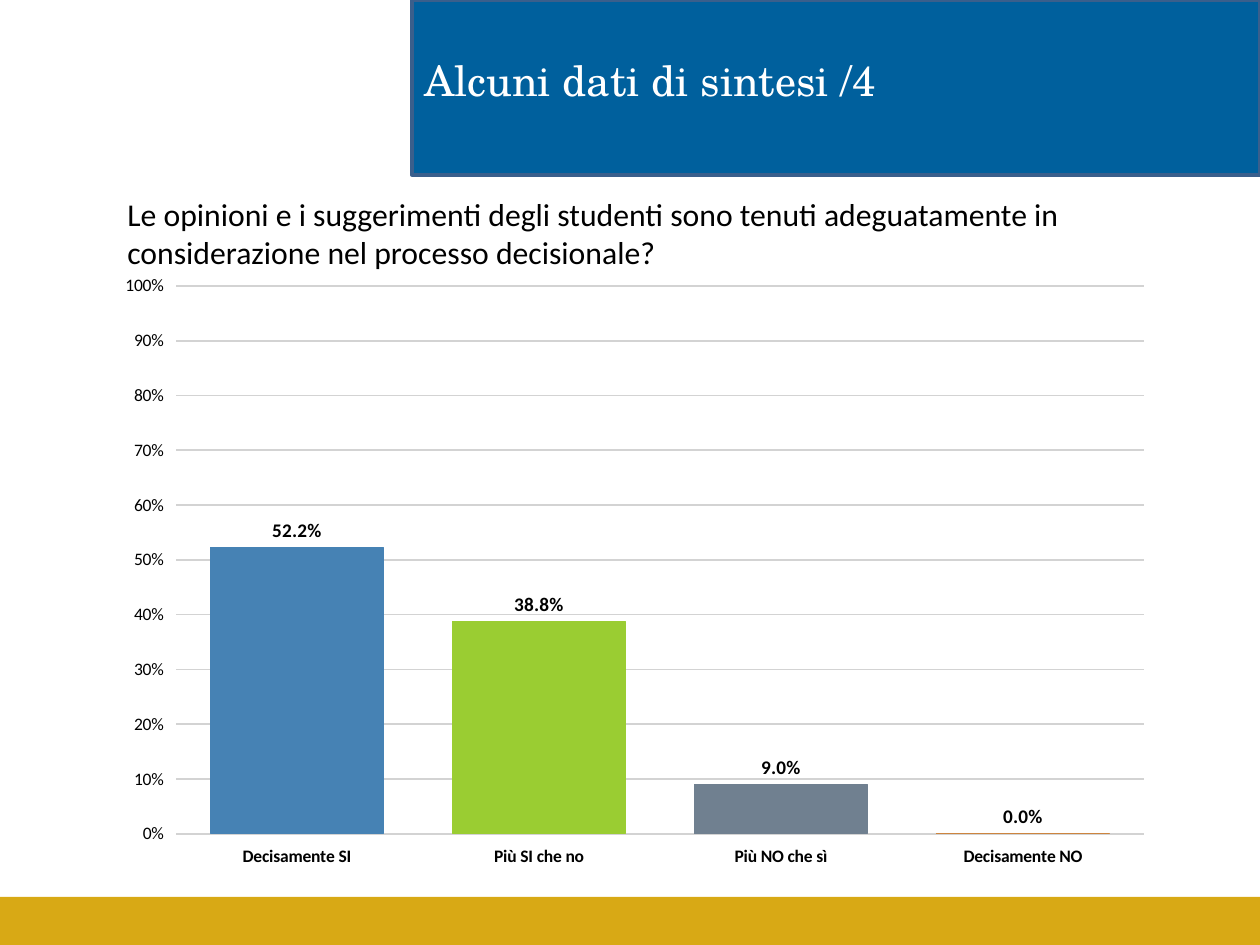
from lxml import etree
from pptx import Presentation
from pptx.chart.data import CategoryChartData
from pptx.dml.color import RGBColor
from pptx.enum.chart import XL_CHART_TYPE, XL_LABEL_POSITION, XL_TICK_MARK
from pptx.enum.shapes import MSO_SHAPE
from pptx.oxml import parse_xml
from pptx.util import Pt

RECT = MSO_SHAPE.RECTANGLE
COLUMN = XL_CHART_TYPE.COLUMN_CLUSTERED
ABOVE = XL_LABEL_POSITION.OUTSIDE_END
OUT = XL_TICK_MARK.OUTSIDE
NO_TICK = XL_TICK_MARK.NONE
PX = 914400 / 126
HEX = {"gold": "D8A915", "blue": "00609D", "edge": "3A5F8C", "white": "FFFFFF",
       "black": "000000", "grid": "D3D3D3"}
BARS = [("Decisamente SI", 0.522, "4682B4"), ("Più SI che no", 0.388, "9ACD32"),
        ("Più NO che sì", 0.09, "708090"), ("Decisamente NO", 0, "CD853F")]


def emu(*px):
    return [round(n * PX) for n in px]


def add_text(box, words, size, font, color):
    frame = slide.shapes.add_textbox(*emu(*box)).text_frame
    frame.word_wrap = True
    run = frame.paragraphs[0].add_run()
    run.text = words
    run.font.size = Pt(size)
    run.font.name = font
    run.font.color.rgb = RGBColor.from_string(HEX[color])


prs = Presentation()
prs.slide_width, prs.slide_height = emu(1260, 945)
slide = prs.slides.add_slide(prs.slide_layouts[6])

# Footer and title bands
for box, fill, edge in [((0, 897, 1260, 48), "gold", None),
                        ((412, 0, 848, 175), "blue", "edge")]:
    band = slide.shapes.add_shape(RECT, *emu(*box))
    band.shadow.inherit = False
    band.fill.solid()
    band.fill.fore_color.rgb = RGBColor.from_string(HEX[fill])
    if edge:
        band.line.color.rgb = RGBColor.from_string(HEX[edge])
        band.line.width = Pt(2)
    else:
        band.line.fill.background()

add_text((412, 48, 848, 56), "Alcuni dati di sintesi /4", 24, "TeX Gyre Schola", "white")

# Chart
data = CategoryChartData(number_format="0.0%")
data.categories = [name for name, _, _ in BARS]
data.add_series("Series 1", [value for _, value, _ in BARS])
chart = slide.shapes.add_chart(COLUMN, *emu(105, 265, 1061, 613), data).chart
chart.has_legend = False
chart.has_title = False
chart.font.name = "Calibri"
chart.font.size = Pt(18)
chart.font.color.rgb = RGBColor.from_string(HEX["black"])

cat, val = chart.category_axis, chart.value_axis
for axis in (cat, val):
    axis.tick_labels.font.size = Pt(10)
    axis.major_tick_mark = OUT
    axis.minor_tick_mark = NO_TICK
    axis.format.line.fill.background()
cat.tick_labels.font.bold = True
val.minimum_scale, val.maximum_scale, val.major_unit = 0, 1, 0.1
val.tick_labels.number_format = "0%"
val.tick_labels.number_format_is_linked = False
val.has_major_gridlines = True
grid = val.major_gridlines.format.line
grid.color.rgb = RGBColor.from_string(HEX["grid"])
grid.width = Pt(1)

plot = chart.plots[0]
plot.gap_width = 40
plot.vary_by_categories = False
series = plot.series[0]
parts = [series] + [series.points[i] for i in range(len(BARS))]
for part, color in zip(parts, [BARS[0][2]] + [bar[2] for bar in BARS]):
    part.format.fill.solid()
    part.format.fill.fore_color.rgb = RGBColor.from_string(color)
    part.format.line.color.rgb = RGBColor.from_string(color)
    part.format.line.width = Pt(0.75)

labels = series.data_labels
labels.show_value = True
labels.position = ABOVE
labels.number_format = "0.0%"
labels.number_format_is_linked = False
labels.font.size = Pt(11)
labels.font.bold = True

# Fix the inner plot area as fractions of the chart
area = chart.element.chart.plotArea
for old in area.findall("{*}layout"):
    area.remove(old)
layout = parse_xml(
    '<c:layout xmlns:c="http://schemas.openxmlformats.org/drawingml/2006/chart">'
    '<c:manualLayout/></c:layout>')
space = etree.QName(layout).namespace
for tag, value in [("layoutTarget", "inner"), ("xMode", "edge"), ("yMode", "edge"),
                   ("x", 71 / 1061), ("y", 21 / 613), ("w", 968 / 1061), ("h", 548 / 613)]:
    etree.SubElement(layout[0], f"{{{space}}}{tag}", val=str(value))
area.insert(0, layout)

add_text((115, 189, 1131, 76),
         "Le opinioni e i suggerimenti degli studenti sono tenuti adeguatamente in "
         "considerazione nel processo decisionale?", 18.1, "Calibri", "black")

prs.save("out.pptx")
